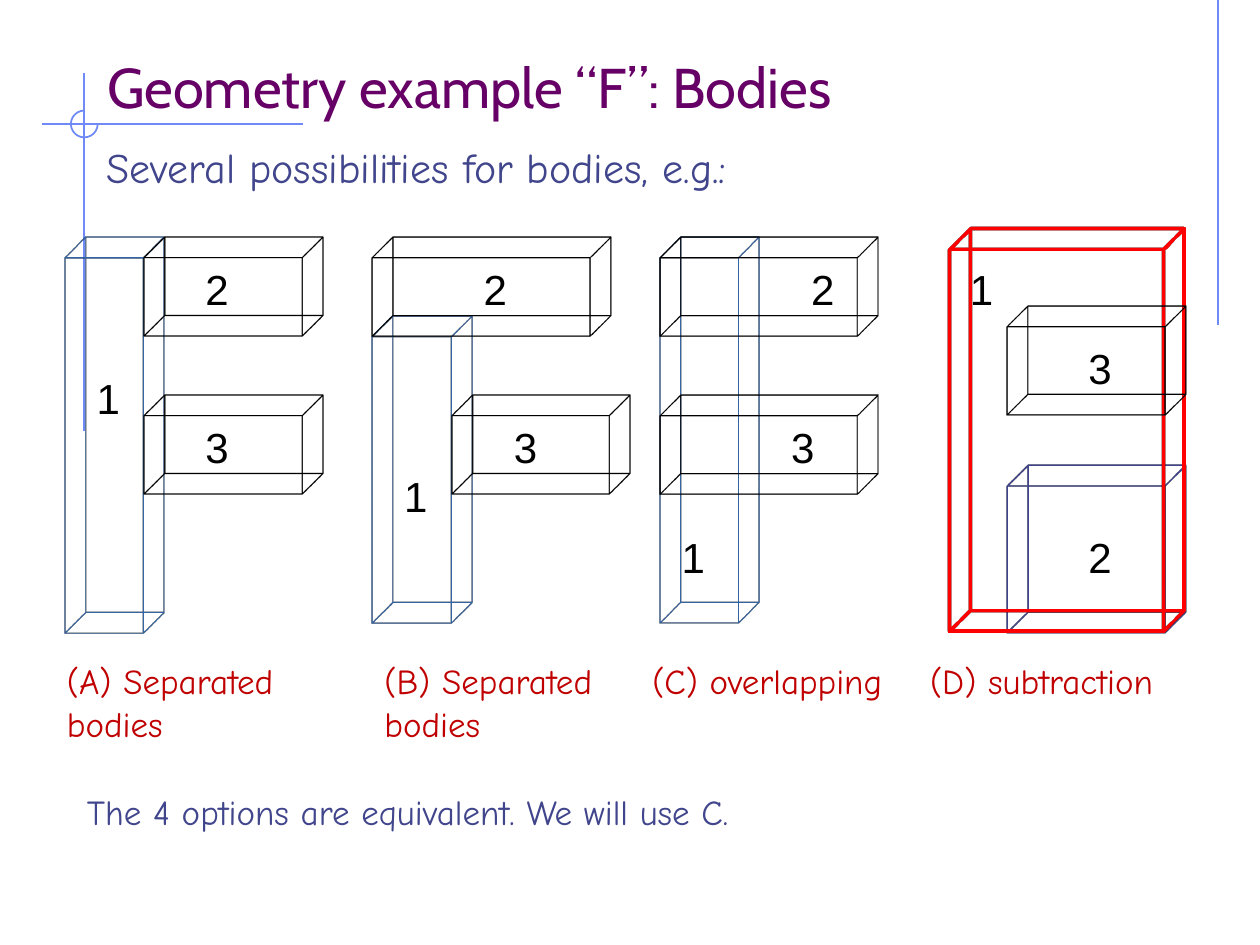
import pptx
import pptx.util
import pptx.dml.color
import pptx.enum.shapes
import pptx.enum.text
import pptx.oxml.ns
import lxml.etree
from pptx.util import Cm

THEME = {
    "fonts": {"title": "Cabin", "body": "Comic Neue", "number": "Arial"},
    "sizes": {"title": 32, "lead": 24, "number": 24, "caption": 20},
    "colors": {"title": "660066", "body": "40458C", "caption": "C00000",
               "number": "000000", "ornament": "6F89F7", "stem": "FF0000",
               "arm": "000000", "block": "FF0000", "cut": "40458C"},
    "widths": {"ornament": 1, "arm": 0.75, "block": 2.25, "cut": 1},
}
DEPTH = Cm(1.19)  # extrusion depth of every body

deck = pptx.Presentation()
deck.slide_width, deck.slide_height = Cm(25.4), Cm(19.05)
slide = deck.slides.add_slide(deck.slide_layouts[6])
SHAPE = pptx.enum.shapes.MSO_SHAPE
qn = pptx.oxml.ns.qn


def outline(part, role):
    """Leave only a line in the role's colour and width."""
    part.line.color.rgb = pptx.dml.color.RGBColor.from_string(THEME["colors"][role])
    part.line.width = pptx.util.Pt(THEME["widths"][role])
    if hasattr(part, "fill"):
        part.fill.background()
        part.shadow.inherit = False
    else:
        lxml.etree.SubElement(part._element.spPr, qn("a:effectLst"))


def write(words, box, font, size, color, anchor="TOP"):
    frame = slide.shapes.add_textbox(*map(Cm, box)).text_frame
    frame_format = {"word_wrap": True,
                    "vertical_anchor": getattr(pptx.enum.text.MSO_ANCHOR, anchor)}
    for name, value in frame_format.items():
        setattr(frame, name, value)
    frame.text = words
    letters = frame.paragraphs[0].font
    font_format = {"name": THEME["fonts"][font],
                   "size": pptx.util.Pt(THEME["sizes"][size])}
    for name, value in font_format.items():
        setattr(letters, name, value)
    letters.color.rgb = pptx.dml.color.RGBColor.from_string(THEME["colors"][color])


# Corner ornament: rule at the right, crosshair and three-quarter circle
for ends in [(24.56, 0, 24.56, 6.55), (6.1, 2.5, 0.84, 2.5), (1.69, 1.48, 1.69, 8.69)]:
    rule = slide.shapes.add_connector(
        pptx.enum.shapes.MSO_CONNECTOR.STRAIGHT, *map(Cm, ends))
    outline(rule, "ornament")
ring = slide.shapes.add_shape(SHAPE.ARC, Cm(1.43), Cm(2.23), Cm(0.54), Cm(0.54))
for index, degrees in enumerate((0, 270)):
    ring.adjustments[index] = degrees * 0.6
outline(ring, "ornament")

# Heading and lead
write("Geometry example “F”: Bodies", (1.91, 0.84, 21.6, 1.7), "title", "title", "title", "BOTTOM")
write("Several possibilities for bodies, e.g.:", (1.9, 2.72, 15.8, 1.27), "body", "lead", "body")

# Bodies of each option: role, then left, top, width, height of the front face
bodies = [
    # (A) stem with two arms beside it
    ("stem", 1.3, 5.18, 1.6, 7.6),
    ("arm", 2.9, 5.18, 3.2, 1.6),
    ("arm", 2.9, 8.38, 3.2, 1.6),
    # (B) top bar resting on a shorter stem
    ("stem", 7.5, 6.78, 1.6, 5.8),
    ("arm", 7.5, 5.18, 4.4, 1.6),
    ("arm", 9.1, 8.38, 3.2, 1.6),
    # (C) arms running through the stem
    ("stem", 13.3, 5.18, 1.6, 7.4),
    ("arm", 13.3, 5.18, 4, 1.6),
    ("arm", 13.3, 8.38, 4, 1.6),
    # (D) block with two pieces cut out
    ("cut", 20.3, 9.78, 3.2, 3),
    ("block", 19.1, 4.98, 4.4, 7.8),
    ("arm", 20.3, 6.58, 3.2, 1.8),
]
for role, *box in bodies:
    body = slide.shapes.add_shape(SHAPE.RECTANGLE, *map(Cm, box))
    if role == "stem":
        body.fill.solid()
        body.fill.fore_color.rgb = pptx.dml.color.RGBColor.from_string(THEME["colors"][role])
        body.line.fill.background()
        body.shadow.inherit = False
    else:
        outline(body, role)
    # Wireframe extrusion towards the top right
    scene = lxml.etree.SubElement(body._element.spPr, qn("a:scene3d"))
    lxml.etree.SubElement(scene, qn("a:camera"), prst="legacyObliqueTopRight")
    lxml.etree.SubElement(scene, qn("a:lightRig"), rig="legacyFlat3", dir="b")
    lxml.etree.SubElement(body._element.spPr, qn("a:sp3d"),
                          extrusionH=str(DEPTH), prstMaterial="legacyWireframe")

# Body numbers: left and top of 1, 2 and 3 in each option
option_numbers = [
    [(1.7, 7.39), (3.89, 5.18), (3.89, 8.38)],
    [(7.9, 9.37), (9.5, 5.18), (10.11, 8.38)],
    [(13.49, 10.59), (16.1, 5.18), (15.7, 8.38)],
    [(19.3, 5.18), (21.69, 10.59), (21.69, 6.78)],
]
for places, width in zip(option_numbers, (1.4, 1.4, 1.4, 0.79)):
    for number, (left, top) in enumerate(places, start=1):
        write(str(number), (left, top, width, 1.27), "number", "number", "number")

# Captions under the options: left, width, height
captions = [("(A) Separated bodies", 1.1, 5.6, 1.96),
            ("(B) Separated bodies", 7.5, 5.6, 1.96),
            ("(C) overlapping", 12.9, 6.4, 1.1),
            ("(D) subtraction", 18.5, 6.5, 1.1)]
for caption, left, width, height in captions:
    write(caption, (left, 13.18, width, height), "body", "caption", "caption")

# Conclusion
write("The 4 options are equivalent. We will use C.", (1.5, 15.82, 23.2, 1.1),
      "body", "caption", "body")

deck.save("out.pptx")
